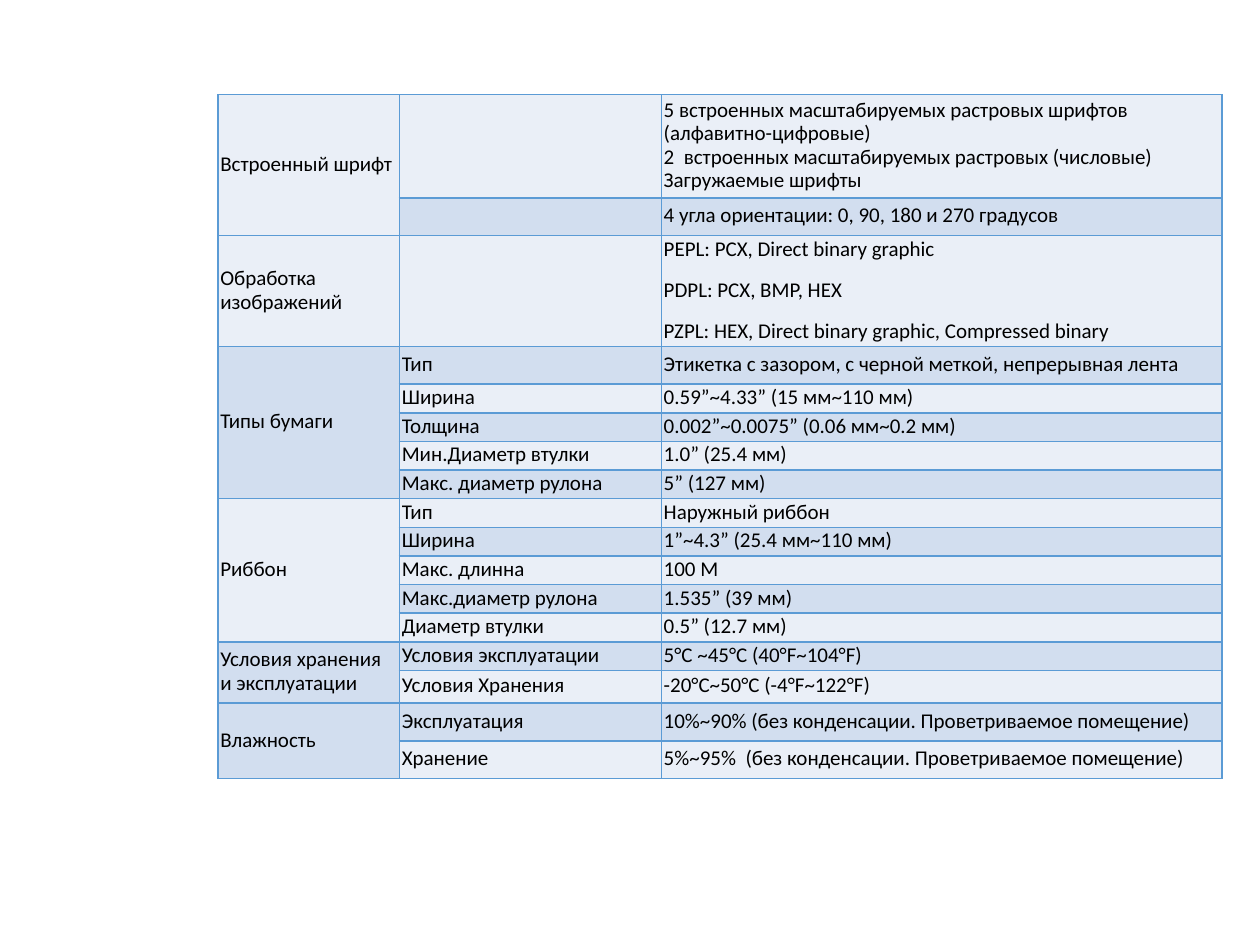
"""Build the slide with the printer specification table."""
from dataclasses import dataclass

import pptx
import pptx.dml.color
import pptx.enum.text
import pptx.oxml
import pptx.oxml.ns
import pptx.util
from pptx.util import Cm

COLORS = {"odd": "EAEFF7", "even": "D2DEEF", "border": "5B9BD5", "text": "000000"}
COLUMN_WIDTHS = (3.66, 5.28, 11.3)
LOW, MIDDLE, HIGH = 0.43, 0.66, 0.76


@dataclass(frozen=True)
class Specification:
    height: float
    label: str
    paragraphs: tuple[str, ...]
    space_after: int = 0
    justify_first: bool = False


@dataclass(frozen=True)
class Group:
    name: str
    rows: tuple[Specification, ...]


GROUPS = (
    Group("Встроенный шрифт", (
        Specification(2.08, "", (
            "5\u00a0встроенных масштабируемых растровых шрифтов (алфавитно-цифровые)\n"
            "2  встроенных масштабируемых растровых (числовые)\n"
            "Загружаемые шрифты",), 10),
        Specification(HIGH, "", ("4 угла ориентации: 0, 90, 180 и 270 градусов",)),
    )),
    Group("Обработка изображений", (
        Specification(1.9, "", (
            "PEPL: PCX, Direct binary graphic",
            "PDPL: PCX, BMP, HEX",
            "PZPL: HEX, Direct binary graphic, Compressed binary"), 10, True),
    )),
    Group("Типы бумаги", (
        Specification(HIGH, "Тип", ("Этикетка с зазором, с черной меткой, непрерывная лента",)),
        Specification(LOW, "Ширина", ("0.59”~4.33” (15 мм~110 мм)",)),
        Specification(LOW, "Толщина", ("0.002”~0.0075” (0.06 мм~0.2 мм)",)),
        Specification(LOW, "Мин.Диаметр втулки", ("1.0” (25.4 мм)",)),
        Specification(LOW, "Макс. диаметр рулона", ("5” (127 мм)",)),
    )),
    Group("Риббон", (
        Specification(LOW, "Тип", ("Наружный риббон",)),
        Specification(LOW, "Ширина", ("1”~4.3” (25.4 мм~110 мм)",)),
        Specification(LOW, "Макс. длинна", ("100 M",)),
        Specification(LOW, "Макс.диаметр рулона", ("1.535” (39 мм)",)),
        Specification(LOW, "Диаметр втулки", ("0.5” (12.7 мм)",)),
    )),
    Group("Условия хранения и эксплуатации", (
        Specification(LOW, "Условия эксплуатации", ("5°C ~45°C (40°F~104°F)",)),
        Specification(MIDDLE, "Условия Хранения", ("-20°C~50°C (-4°F~122°F)",)),
    )),
    Group("Влажность", (
        Specification(HIGH, "Эксплуатация", (
            "10%~90% (без конденсации. Проветриваемое помещение)",)),
        Specification(HIGH, "Хранение", (
            "5%~95%  (без конденсации. Проветриваемое помещение)",)),
    )),
)


def add_borders(cell: pptx.table._Cell) -> None:
    properties = cell._tc.get_or_add_tcPr()
    for position, side in enumerate(("lnL", "lnR", "lnT", "lnB")):
        properties.insert(position, pptx.oxml.parse_xml(
            f'<a:{side} {pptx.oxml.ns.nsdecls("a")} w="12700"><a:solidFill>'
            f'<a:srgbClr val="{COLORS["border"]}"/></a:solidFill></a:{side}>'))


def fill_cell(cell: pptx.table._Cell, color: str, paragraphs: tuple[str, ...] = ("",),
              space_after: int = 0) -> None:
    cell.margin_left = cell.margin_right = Cm(0.05)
    cell.margin_top = cell.margin_bottom = Cm(0.05)
    cell.vertical_anchor = pptx.enum.text.MSO_ANCHOR.MIDDLE
    cell.fill.solid()
    cell.fill.fore_color.rgb = pptx.dml.color.RGBColor.from_string(color)
    add_borders(cell)
    for index, text in enumerate(paragraphs):
        frame = cell.text_frame
        paragraph = frame.add_paragraph() if index else frame.paragraphs[0]
        paragraph.text = text
        paragraph.line_spacing = pptx.util.Pt(13.5)
        paragraph.space_after = pptx.util.Pt(space_after)
        paragraph.font.size = pptx.util.Pt(12)
        paragraph.font.name = "Calibri"
        paragraph.font.color.rgb = pptx.dml.color.RGBColor.from_string(COLORS["text"])


def add_group(table: pptx.table.Table, group: Group, first: int) -> None:
    for index, row in enumerate(group.rows, first):
        table.rows[index].height = Cm(row.height)
        color = COLORS["even" if index % 2 else "odd"]
        name = group.name if index == first else ""
        fill_cell(table.cell(index, 0), color, (name,))
        fill_cell(table.cell(index, 1), color, (row.label,))
        value = table.cell(index, 2)
        fill_cell(value, color, row.paragraphs, row.space_after)
        if row.justify_first:
            value.text_frame.paragraphs[0].alignment = pptx.enum.text.PP_ALIGN.JUSTIFY
    if len(group.rows) > 1:
        table.cell(first, 0).merge(table.cell(first + len(group.rows) - 1, 0))


def add_specification_table(slide: pptx.slide.Slide) -> None:
    row_count = sum(len(group.rows) for group in GROUPS)
    height = Cm(14.12)
    shape = slide.shapes.add_table(
        row_count, len(COLUMN_WIDTHS), Cm(4.39), Cm(1.91), Cm(sum(COLUMN_WIDTHS)), height)
    table = shape.table
    table.first_row = False
    table.horz_banding = False
    for column, width in zip(table.columns, COLUMN_WIDTHS):
        column.width = Cm(width)
    first = 0
    for group in GROUPS:
        add_group(table, group, first)
        first += len(group.rows)
    shape.height = height


def main() -> None:
    presentation = pptx.Presentation()
    presentation.slide_width = Cm(25.4)
    presentation.slide_height = Cm(19.05)
    slide = presentation.slides.add_slide(presentation.slide_layouts[6])
    add_specification_table(slide)
    presentation.save("out.pptx")


if __name__ == "__main__":
    main()
